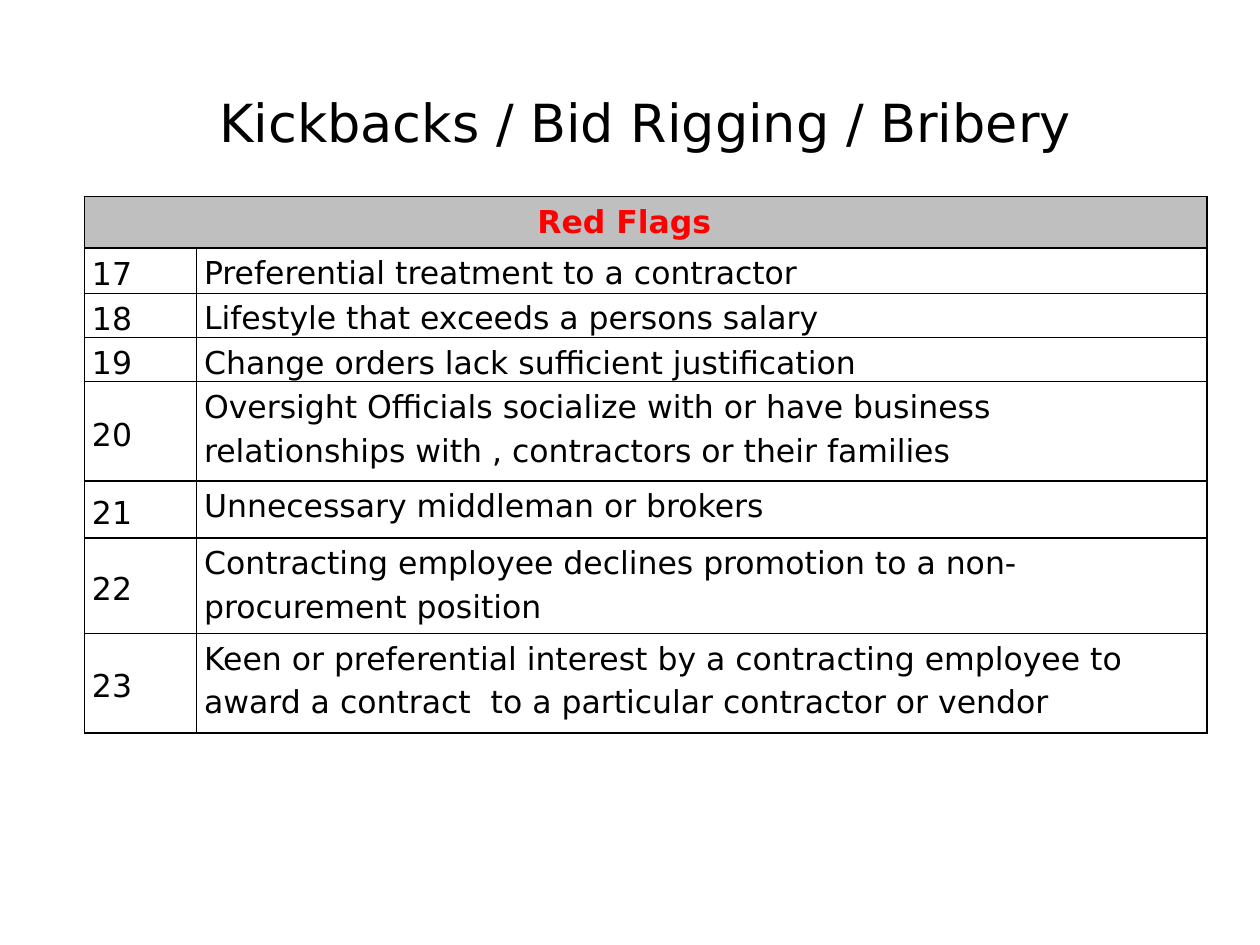
from dataclasses import dataclass

from lxml.etree import SubElement
from pptx import Presentation
from pptx.dml.color import RGBColor
from pptx.enum.text import MSO_ANCHOR, PP_ALIGN
from pptx.oxml.ns import qn
from pptx.util import Inches, Pt


@dataclass(frozen=True)
class Theme:
    font: str = "DejaVu Sans"
    ink: str = "000000"
    alert: str = "FF0000"
    band: str = "BFBFBF"
    title_size: int = 30
    body_size: int = 18
    border: int = 1


theme = Theme()
unit = Inches(0.1)


def cells(count):
    return round(count * unit)


def write(frame, text, size, color, spacing, bold=False, align=PP_ALIGN.LEFT):
    frame.text = text
    line = frame.paragraphs[0]
    line.alignment = align
    line.line_spacing = spacing
    line.font.name = theme.font
    line.font.size = Pt(size)
    line.font.bold = bold
    line.font.color.rgb = RGBColor.from_string(color)


prs = Presentation()
prs.slide_width, prs.slide_height = cells(100), cells(75)
slide = prs.slides.add_slide(prs.slide_layouts[5])

title = slide.shapes.title
title.left, title.top = cells(7.5), cells(5)
title.width, title.height = cells(87.5), cells(10)
title.text_frame.vertical_anchor = MSO_ANCHOR.MIDDLE
write(title.text_frame, "Kickbacks / Bid Rigging / Bribery",
      theme.title_size, theme.ink, 0.9, align=PP_ALIGN.CENTER)

first_number = 17
flags = [
    "Preferential treatment to a contractor",
    "Lifestyle that exceeds a persons salary",
    "Change orders lack sufficient justification",
    "Oversight Officials socialize with or have business "
    "relationships with , contractors or their families",
    "Unnecessary middleman or brokers",
    "Contracting employee declines promotion to a non-procurement position",
    "Keen or preferential interest by a contracting employee to "
    "award a contract  to a particular contractor or vendor",
]
column_widths = [8.9, 80.2]
row_heights = [4.1, 3.6, 3.5, 3.5, 7.9, 4.5, 7.6, 7.9]

red_flags = slide.shapes.add_table(
    len(row_heights), len(column_widths), cells(6.7), cells(15.6),
    cells(sum(column_widths)), cells(sum(row_heights))).table
red_flags.first_row = False
red_flags.horz_banding = False
for column, width in zip(red_flags.columns, column_widths):
    column.width = cells(width)
for row, height in zip(red_flags.rows, row_heights):
    row.height = cells(height)

for cell in red_flags.iter_cells():
    cell.margin_left = cell.margin_right = cells(0.6)
    cell.margin_top = cell.margin_bottom = 0
    properties = cell._tc.get_or_add_tcPr()
    for side in ("lnL", "lnR", "lnT", "lnB"):
        edge = SubElement(properties, qn(f"a:{side}"), w=str(Pt(theme.border)))
        edge_fill = SubElement(edge, qn("a:solidFill"))
        SubElement(edge_fill, qn("a:srgbClr"), val=theme.ink)
    cell.fill.background()

heading = red_flags.cell(0, 0)
heading.merge(red_flags.cell(0, 1))
heading.fill.solid()
heading.fill.fore_color.rgb = RGBColor.from_string(theme.band)
heading.margin_right = cells(4)
write(heading.text_frame, "Red Flags", theme.body_size, theme.alert, 1.2,
      bold=True, align=PP_ALIGN.CENTER)

for row, flag in enumerate(flags, start=1):
    number = red_flags.cell(row, 0)
    number.vertical_anchor = MSO_ANCHOR.MIDDLE
    write(number.text_frame, str(first_number + row - 1),
          theme.body_size, theme.ink, 1.2)
    write(red_flags.cell(row, 1).text_frame, flag,
          theme.body_size, theme.ink, 1.2)

prs.save("out.pptx")
